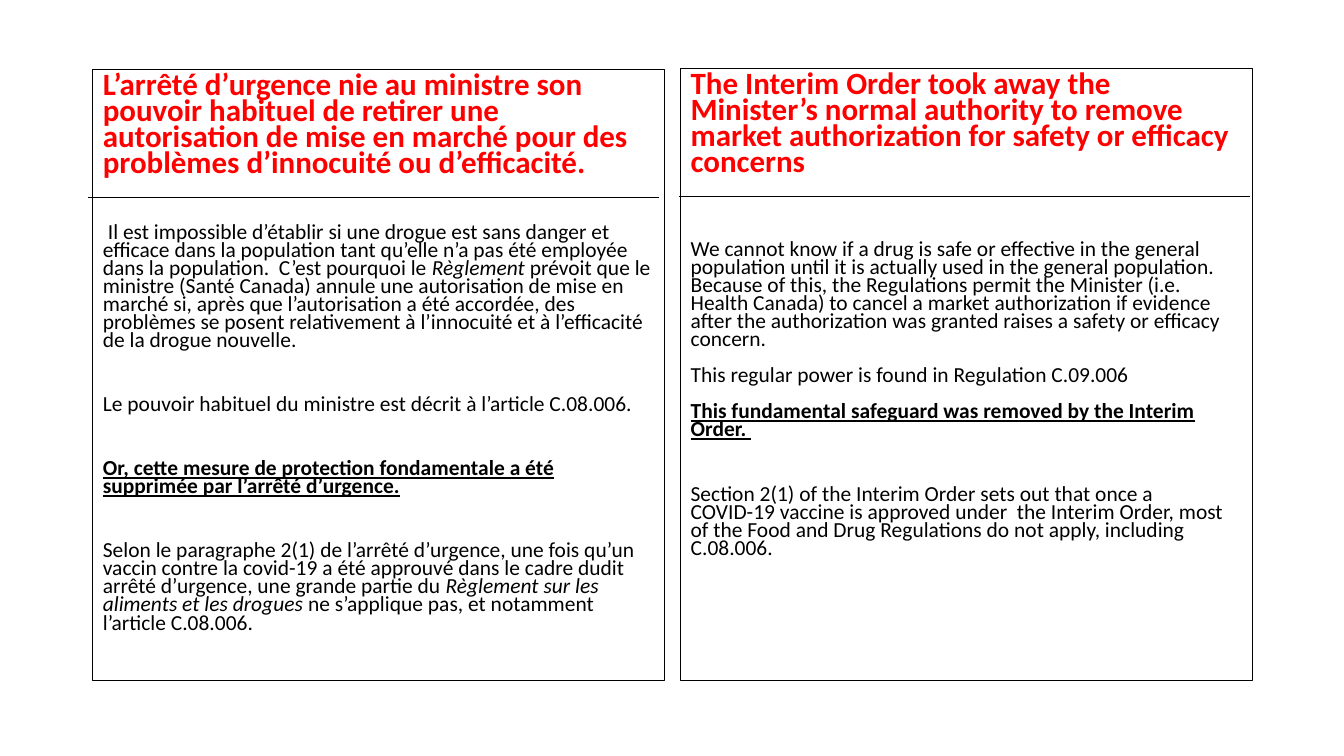
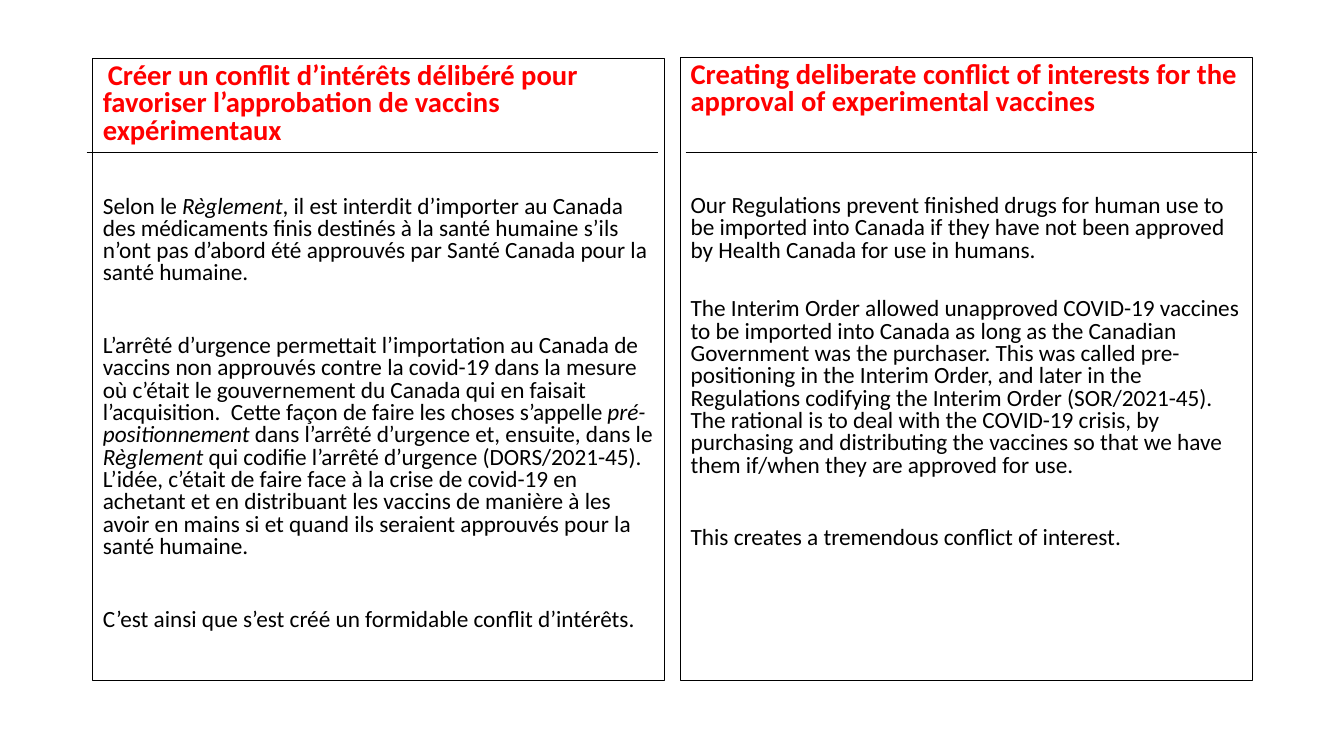
from pptx import Presentation
from pptx.dml.color import RGBColor
from pptx.enum.shapes import MSO_CONNECTOR as Link
from pptx.enum.text import MSO_ANCHOR as Anchor, MSO_AUTO_SIZE as Fit
from pptx.oxml.ns import qn
from pptx.util import Inches, Pt
from lxml.etree import SubElement

COLORS = {"head": "FF0000", "text": "000000", "line": "000000"}
FONT = "Calibri"
WIDTH = 5.67
BOTTOM = 6.75
LEFTS = (0.92, 6.75)


class Deck:
    def __init__(self):
        self.prs = Presentation()
        self.prs.slide_width = Inches(13.33)
        self.prs.slide_height = Inches(7.5)

    def add(self, head, body, rate):
        """Start a two-column slide with its text sizes and line spacing."""
        self.slide = self.prs.slides.add_slide(self.prs.slide_layouts[3])
        self.head, self.body, self.rate = head, body, rate
        title, *self.boxes = self.slide.placeholders
        title.element.getparent().remove(title.element)

    def stroke(self, line, width):
        line.color.rgb = RGBColor.from_string(COLORS["line"])
        line.width = Pt(width)

    def para(self, par, text, size, color, gap, bold=False, under=False, indent=0):
        """Fill a paragraph; words between asterisks are italic."""
        par.line_spacing = self.rate
        par.space_before = Pt(gap)
        props = par._p.get_or_add_pPr()
        props.set("marL", "0")
        props.set("indent", str(Inches(indent)))
        SubElement(props, qn("a:buNone"))
        font = par.font
        font.name, font.size = FONT, Pt(size)
        font.bold, font.underline = bold, under
        font.color.rgb = RGBColor.from_string(COLORS[color])
        for i, part in enumerate(text.split("*")):
            run = par.add_run()
            run.text = part
            if i % 2:
                run.font.italic = True

    def panel(self, side, top, head, items, indent=0):
        """Fill one framed column; items are (gap, text, options)."""
        box = self.boxes[side]
        box.left, box.top = Inches(LEFTS[side]), Inches(top)
        box.width, box.height = Inches(WIDTH), Inches(BOTTOM - top)
        self.stroke(box.line, 0.75)
        frame = box.text_frame
        frame.word_wrap, frame.auto_size = True, Fit.NONE
        frame.vertical_anchor = Anchor.TOP
        self.para(frame.paragraphs[0], head, self.head, "head", 10,
                  bold=True, indent=indent)
        for gap, text, opts in items:
            self.para(frame.add_paragraph(), text, self.body, "text", gap, **opts)

    def rule(self, left, top):
        line = self.slide.shapes.add_connector(
            Link.STRAIGHT, Inches(left), Inches(top),
            Inches(left + WIDTH), Inches(top))
        self.stroke(line.line, 0.5)
        SubElement(line._element.spPr, qn("a:effectLst"))


PLAIN = {}
STRONG = {"bold": True, "under": True}


def power(deck):
    deck.add(22.1, 15.3, 0.7)
    deck.panel(0, 0.69, "L’arrêté d’urgence nie au ministre son pouvoir habituel de retirer une autorisation de mise en marché pour des problèmes d’innocuité ou d’efficacité.", [
        (33, "Il est impossible d’établir si une drogue est sans danger et efficace dans la population tant qu’elle n’a pas été employée dans la population.  C’est pourquoi le *Règlement* prévoit que le ministre (Santé Canada) annule une autorisation de mise en marché si, après que l’autorisation a été accordée, des problèmes se posent relativement à l’innocuité et à l’efficacité de la drogue nouvelle.", {"indent": 0.05}),
        (33, "Le pouvoir habituel du ministre est décrit à l’article C.08.006.", PLAIN),
        (33, "Or, cette mesure de protection fondamentale a été supprimée par l’arrêté d’urgence.", STRONG),
        (33, "Selon le paragraphe 2(1) de l’arrêté d’urgence, une fois qu’un vaccin contre la covid-19 a été approuvé dans le cadre dudit arrêté d’urgence, une grande partie du *Règlement sur les aliments et les drogues* ne s’applique pas, et notamment l’article C.08.006.", PLAIN),
    ])
    deck.panel(1, 0.68, "The Interim Order took away the Minister’s normal authority to remove market authorization for safety or efficacy concerns", [
        (46, "We cannot know if a drug is safe or effective in the general population until it is actually used in the general population. Because of this, the Regulations permit the Minister (i.e. Health Canada) to cancel a market authorization if evidence after the authorization was granted raises a safety or efficacy concern.", PLAIN),
        (13, "This regular power is found in Regulation C.09.006", PLAIN),
        (13, "This fundamental safeguard was removed by the Interim Order. ", STRONG),
        (33, "Section 2(1) of the Interim Order sets out that once a COVID-19 vaccine is approved under  the Interim Order, most of the Food and Drug Regulations do not apply, including C.08.006.", PLAIN),
    ])
    deck.rule(6.73, 1.95)
    deck.rule(0.87, 1.96)


def conflict(deck):
    deck.add(20.4, 16.6, 0.8)
    deck.panel(0, 0.58, "Créer un conflit d’intérêts délibéré pour favoriser l’approbation de vaccins expérimentaux", [
        (36, "Selon le *Règlement*, il est interdit d’importer au Canada des médicaments finis destinés à la santé humaine s’ils n’ont pas d’abord été approuvés par Santé Canada pour la santé humaine.", PLAIN),
        (36, "L’arrêté d’urgence permettait l’importation au Canada de vaccins non approuvés contre la covid-19 dans la mesure où c’était le gouvernement du Canada qui en faisait l’acquisition.  Cette façon de faire les choses s’appelle *pré-positionnement* dans l’arrêté d’urgence et, ensuite, dans le *Règlement* qui codifie l’arrêté d’urgence (DORS/2021-45).  L’idée, c’était de faire face à la crise de covid-19 en achetant et en distribuant les vaccins de manière à les avoir en mains si et quand ils seraient approuvés pour la santé humaine.", PLAIN),
        (36, "C’est ainsi que s’est créé un formidable conflit d’intérêts.", PLAIN),
    ], indent=0.05)
    deck.panel(1, 0.57, "Creating deliberate conflict of interests for the approval of experimental vaccines", [
        (56, "Our Regulations prevent finished drugs for human use to be imported into Canada if they have not been approved by Health Canada for use in humans.", PLAIN),
        (26, "The Interim Order allowed unapproved COVID-19 vaccines to be imported into Canada as long as the Canadian Government was the purchaser. This was called pre-positioning in the Interim Order, and later in the Regulations codifying the Interim Order (SOR/2021-45). The rational is to deal with the COVID-19 crisis, by purchasing and distributing the vaccines so that we have them if/when they are approved for use.", PLAIN),
        (36, "This creates a tremendous conflict of interest.", PLAIN),
    ])
    deck.rule(0.86, 1.51)
    deck.rule(6.8, 1.51)


def main():
    deck = Deck()
    power(deck)
    conflict(deck)
    deck.prs.save("out.pptx")


if __name__ == "__main__":
    main()
